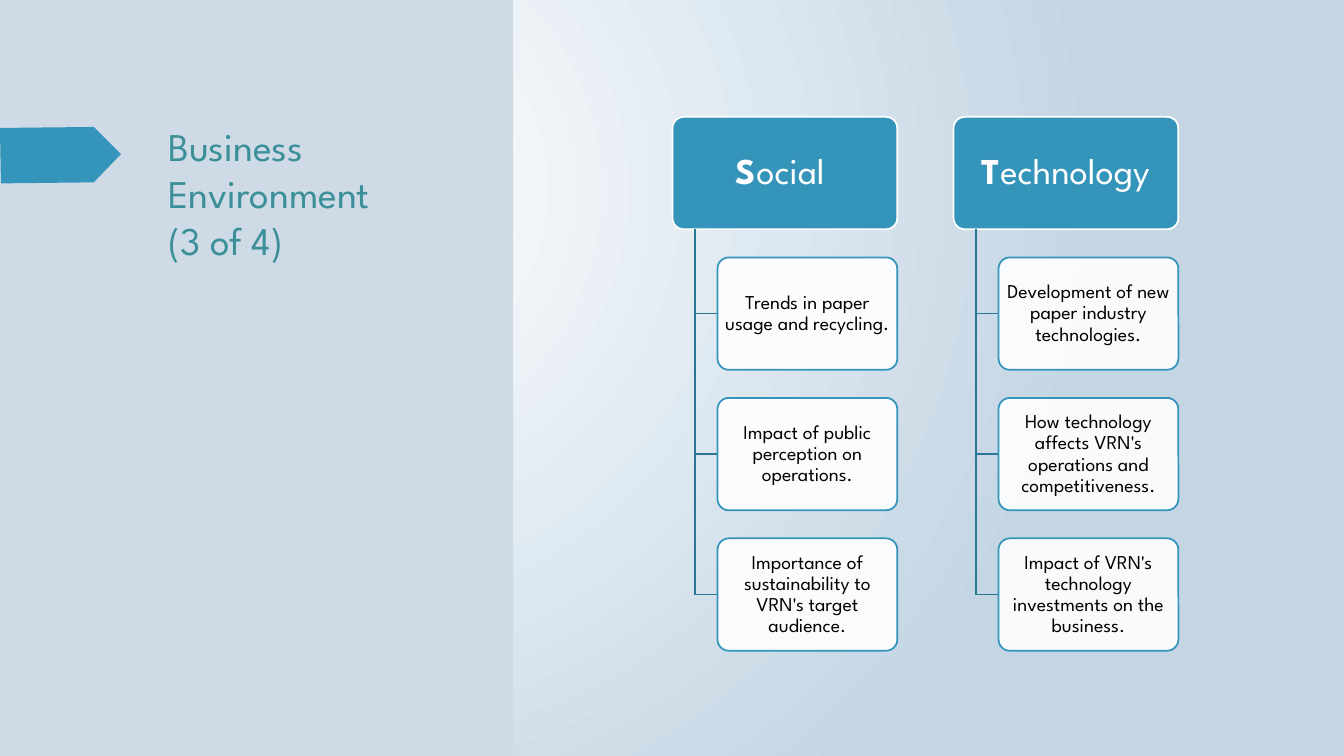
from lxml import etree
from pptx import Presentation
from pptx.dml.color import RGBColor
from pptx.enum.shapes import MSO_SHAPE as Shape
from pptx.enum.text import MSO_ANCHOR as Anchor, MSO_AUTO_SIZE as AutoSize, PP_ALIGN as Align
from pptx.oxml.ns import qn
from pptx.util import Inches, Pt

FONT = "League Spartan"
COLORS = {
    "white": "FFFFFF",
    "backdrop": "C4D5E4",
    "panel": "CEDBE6",
    "accent": "3494BA",
    "stem": "2A7795",
    "title": "3A8F98",
    "text": "000000",
}

# Hierarchy proportions all follow from the width of a heading
HEADING_WIDTH = 2.23
BOX_HEIGHT = HEADING_WIDTH / 2
ROW_STEP = BOX_HEIGHT * 1.25
COLUMN_STEP = HEADING_WIDTH * 1.25
STEM_INDENT = HEADING_WIDTH * 0.1
ITEM_INDENT = HEADING_WIDTH * 0.2
HIERARCHY_LEFT, HIERARCHY_TOP = 6.67, 1.16

# Bold initial, rest of the heading, items
FACTORS = [
    ("S", "ocial ", [
        "Trends in paper usage and recycling.",
        "Impact of public perception on operations.",
        "Importance of sustainability to VRN's target audience.",
    ]),
    ("T", "echnology", [
        "Development of new paper industry technologies.",
        "How technology affects VRN's operations and competitiveness.",
        "Impact of VRN's technology investments on the business.",
    ]),
]


def color(name):
    return RGBColor.from_string(COLORS[name])


def set_background(slide):
    fill = slide.background.fill
    fill.gradient()
    for position, (stop, name) in enumerate(zip(fill.gradient_stops, ("white", "backdrop"))):
        stop.color.rgb = color(name)
        stop.position = position
    # Radial shading needs XML
    gradient = slide.element.find(".//" + qn("a:gradFill"))
    gradient.remove(gradient.find(qn("a:lin")))
    radial = etree.SubElement(gradient, qn("a:path"), {"path": "circle"})
    etree.SubElement(radial, qn("a:fillToRect"),
                     {"l": "50000", "t": "50000", "r": "100000", "b": "100000"})


def style_shape(shape, fill=None, line=None, opacity=100):
    shape.shadow.inherit = False
    if fill:
        shape.fill.solid()
        shape.fill.fore_color.rgb = color(fill)
        if opacity < 100:
            tone = shape.element.spPr.find(qn("a:solidFill")).find(qn("a:srgbClr"))
            etree.SubElement(tone, qn("a:alpha"), {"val": str(opacity * 1000)})
    else:
        shape.fill.background()
    if line:
        shape.line.color.rgb = color(line)
        shape.line.width = Pt(1.25)
    else:
        shape.line.fill.background()


def add_run(paragraph, text, size, text_color, bold=False):
    run = paragraph.add_run()
    run.text = text
    run.font.name = FONT
    run.font.size = Pt(size)
    run.font.bold = bold
    run.font.color.rgb = color(text_color)


def add_outline(slide, points, closed):
    points = [(Inches(x), Inches(y)) for x, y in points]
    builder = slide.shapes.build_freeform(*points[0])
    builder.add_line_segments(points[1:], close=closed)
    return builder.convert_to_shape()


def add_box(slide, left, top, width, fill, line, inset, runs, opacity=100):
    box = slide.shapes.add_shape(Shape.ROUNDED_RECTANGLE, Inches(left), Inches(top),
                                 Inches(width), Inches(BOX_HEIGHT))
    box.adjustments[0] = 0.1
    style_shape(box, fill, line, opacity)
    frame = box.text_frame
    frame.word_wrap = True
    frame.vertical_anchor = Anchor.MIDDLE
    frame.margin_left = frame.margin_right = Inches(inset)
    frame.margin_top = frame.margin_bottom = Inches(inset - 0.01)
    paragraph = frame.paragraphs[0]
    paragraph.alignment = Align.CENTER
    paragraph.line_spacing = 0.9
    for run in runs:
        add_run(paragraph, *run)


def add_factor(slide, left, initial, rest, items):
    add_box(slide, left, HIERARCHY_TOP, HEADING_WIDTH, "accent", "white", 0.05,
            [(initial, 26, "white", True), (rest, 26, "white")])
    stem_x, item_left = left + STEM_INDENT, left + ITEM_INDENT
    for row, item in enumerate(items, start=1):
        top = HIERARCHY_TOP + row * ROW_STEP
        middle = top + BOX_HEIGHT / 2
        elbow = add_outline(slide, [(stem_x, HIERARCHY_TOP + BOX_HEIGHT),
                                    (stem_x, middle), (item_left, middle)], closed=False)
        style_shape(elbow, line="stem")
        add_box(slide, item_left, top, HEADING_WIDTH - ITEM_INDENT, "white", "accent",
                0.03, [(item, 14, "text")], opacity=90)


def add_side_panel(slide):
    panel = slide.shapes.add_shape(Shape.RECTANGLE, 0, 0, Inches(5.09), Inches(7.5))
    style_shape(panel, "panel")
    # The panel lies behind the title
    slide.shapes.title.element.addprevious(panel.element)
    arrow = add_outline(slide, [(0, 1.27), (0.93, 1.26), (1.2, 1.53),
                                (0.93, 1.81), (0.01, 1.82)], closed=True)
    style_shape(arrow, "accent")


def set_title(slide):
    title = slide.shapes.title
    title.left, title.top = Inches(1.57), Inches(1.16)
    title.width, title.height = Inches(3.29), Inches(5.31)
    frame = title.text_frame
    frame.word_wrap = True
    frame.auto_size = AutoSize.NONE
    frame.vertical_anchor = Anchor.TOP
    paragraph = frame.paragraphs[0]
    paragraph.alignment = Align.LEFT
    add_run(paragraph, "Business Environment ", 28, "title")
    paragraph.add_line_break()
    add_run(paragraph, "(3 of 4)", 28, "title")


def main():
    presentation = Presentation()
    presentation.slide_width, presentation.slide_height = Inches(13.33), Inches(7.5)
    slide = presentation.slides.add_slide(presentation.slide_layouts[5])

    set_background(slide)
    set_title(slide)
    add_side_panel(slide)

    # One column per factor
    for column, factor in enumerate(FACTORS):
        add_factor(slide, HIERARCHY_LEFT + column * COLUMN_STEP, *factor)

    presentation.save("out.pptx")


if __name__ == "__main__":
    main()
